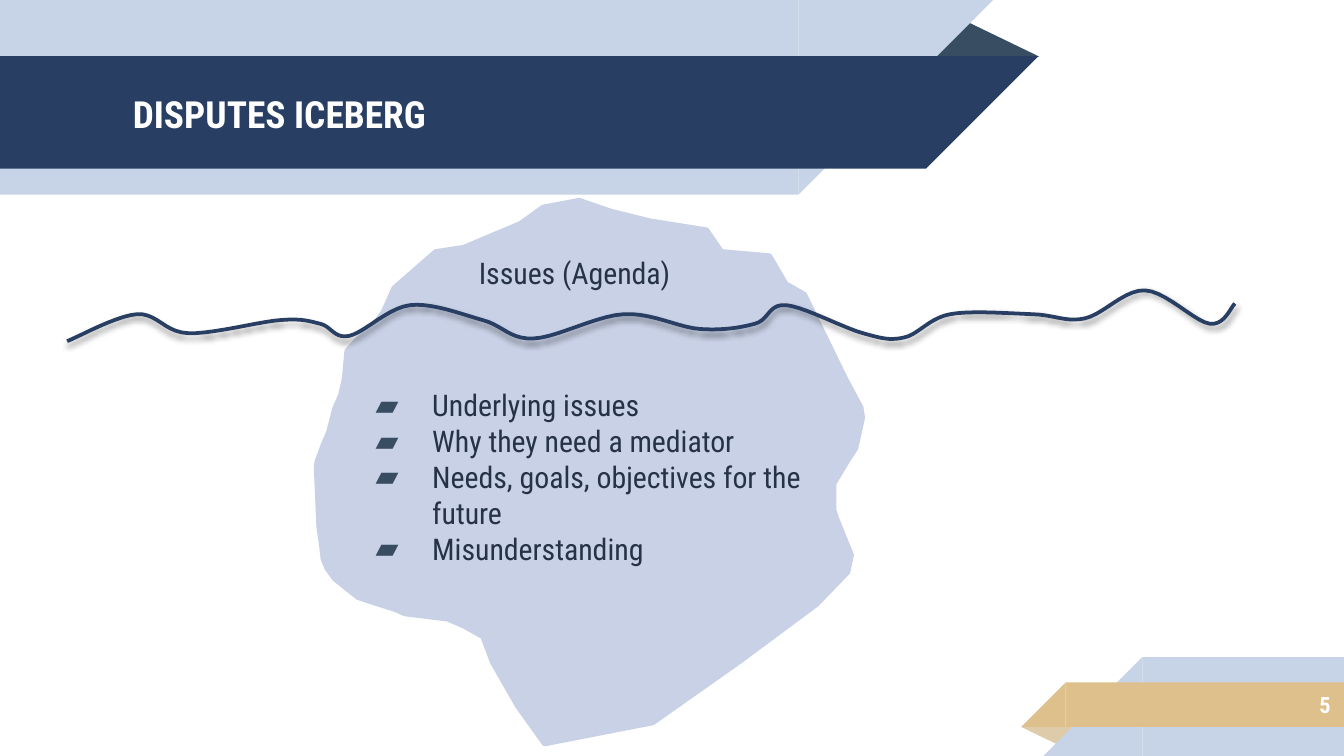
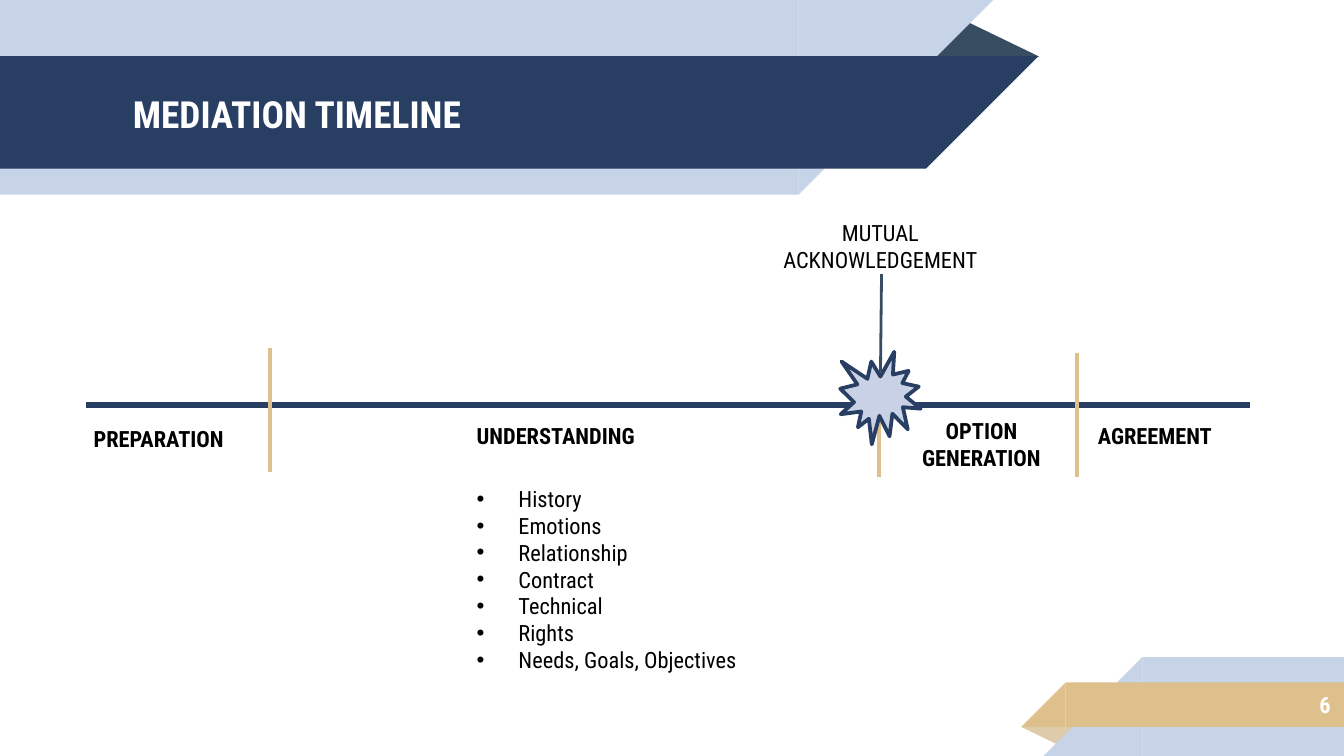
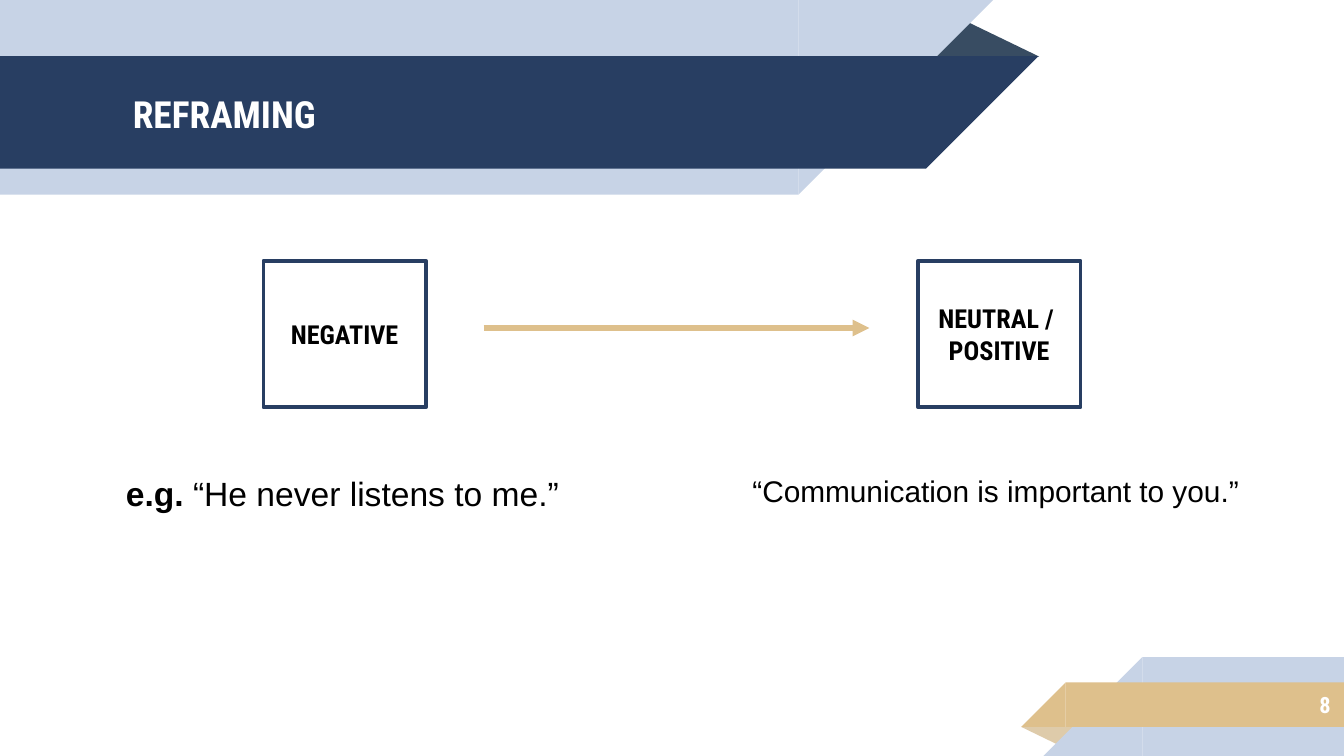
from dataclasses import dataclass

from lxml import etree
from pptx import Presentation
from pptx.dml.color import RGBColor
from pptx.enum.shapes import MSO_CONNECTOR, MSO_SHAPE
from pptx.enum.text import MSO_ANCHOR, PP_ALIGN
from pptx.oxml.ns import qn
from pptx.util import Cm, Pt

RECTANGLE = MSO_SHAPE.RECTANGLE
RIGHT_TRIANGLE = MSO_SHAPE.RIGHT_TRIANGLE
TRIANGLE = MSO_SHAPE.ISOSCELES_TRIANGLE
BURST = MSO_SHAPE.EXPLOSION1
STRAIGHT = MSO_CONNECTOR.STRAIGHT
TOP, MIDDLE = MSO_ANCHOR.TOP, MSO_ANCHOR.MIDDLE
LEFT, CENTER, RIGHT = PP_ALIGN.LEFT, PP_ALIGN.CENTER, PP_ALIGN.RIGHT


@dataclass(frozen=True)
class Theme:
    navy: str = "283E62"
    slate: str = "384C62"
    pale: str = "C7D3E6"
    ice: str = "C8D1E6"
    gold: str = "DEC08C"
    sand: str = "DECBAA"
    ink: str = "263248"
    black: str = "000000"
    white: str = "FFFFFF"
    font: str = "Roboto Condensed"
    quote_font: str = "Arial"
    title_size: int = 20
    quote_size: int = 18
    body_size: int = 16
    box_size: int = 14
    label_size: int = 12


THEME = Theme()
EVEN_INSETS = (0.25, 0.25, 0.25, 0.25)
TEXT_INSETS = (0.25, 0.13, 0.25, 0.13)

ICEBERG = [
    (7.44, 5.44), (8.23, 4.75), (8.76, 4.67), (9.83, 4.22), (10.26, 3.91),
    (10.95, 3.78), (11.56, 3.99), (12.29, 4.17), (13.36, 4.34), (13.64, 4.75),
    (14.55, 4.83), (14.86, 5.36), (15.21, 5.56), (15.98, 7.14), (16.28, 7.7),
    (16.31, 7.9), (16.18, 8.48), (16.03, 8.71), (15.77, 9.14), (15.77, 9.65),
    (15.82, 9.8), (16.1, 10.49), (16.03, 10.82), (15.44, 11.43), (14, 12.5),
    (12.34, 13.67), (10.29, 14.07), (9.91, 13.54), (9.78, 13.36), (9.3, 12.52),
    (9.12, 12.04), (8.76, 11.84), (8.46, 11.71), (7.65, 11.61), (7.47, 11.53),
    (7.06, 11.4), (6.76, 11.3), (6.32, 10.95), (6.17, 10.74), (6.1, 10.57),
    (6.07, 10.31), (6.02, 9.96), (5.97, 8.81), (5.99, 8.71), (6.1, 8.41),
    (6.2, 8.18), (6.32, 7.72), (6.43, 7.47), (6.5, 7.16), (6.55, 6.63),
    (6.73, 6.43), (7.04, 6.17), (7.24, 5.89),
]
WATERLINE = [
    (1.27, 6.45), (2.59, 5.94), (3.56, 6.3), (5.31, 6.05), (6.05, 6.12),
    (6.6, 6.35), (7.75, 5.77), (9.12, 6.05), (10.08, 6.4), (11.79, 5.94),
    (13.23, 6.22), (14.27, 6.12), (14.86, 5.77), (16.31, 6.3), (17.09, 6.38),
    (17.96, 5.94), (19.51, 5.94), (20.5, 6.02), (21.64, 5.49), (22.86, 6.12),
    (23.34, 5.74),
]


def rgb(color):
    return RGBColor.from_string(color)


def cm(values):
    return [Cm(value) for value in values]


def child(parent, tag, **attributes):
    return etree.SubElement(parent, qn(tag), **attributes)


def paint(shape, fill=None, line=None, width=1):
    shape.shadow.inherit = False
    if fill:
        shape.fill.solid()
        shape.fill.fore_color.rgb = rgb(fill)
    else:
        shape.fill.background()
    if line:
        shape.line.color.rgb = rgb(line)
        shape.line.width = Pt(width)
    else:
        shape.line.fill.background()
    return shape


def add_block(slide, kind, box, fill, line=None, width=1, rotation=0):
    block = paint(slide.shapes.add_shape(kind, *cm(box)), fill, line, width)
    block.rotation = rotation
    return block


def add_outline(slide, points, closed, **look):
    start, *rest = [cm(point) for point in points]
    builder = slide.shapes.build_freeform(*start, scale=1.0)
    builder.add_line_segments(rest, close=closed)
    return paint(builder.convert_to_shape(), **look)


def add_rule(slide, start, end, color, width, arrow=False):
    rule = slide.shapes.add_connector(STRAIGHT, *cm(start + end))
    rule.line.color.rgb = rgb(color)
    rule.line.width = Pt(width)
    if arrow:
        child(rule.line._get_or_add_ln(), "a:tailEnd", type="triangle")
    child(rule._element.spPr, "a:effectLst")


def add_bullet(paragraph, symbol, color, indent, hang):
    properties = paragraph._p.get_or_add_pPr()
    properties.set("marL", str(Cm(indent)))
    properties.set("indent", str(-Cm(hang)))
    child(child(properties, "a:buClr"), "a:srgbClr", val=color)
    child(properties, "a:buFont", typeface=THEME.quote_font)
    child(properties, "a:buChar", char=symbol)


def write(shape, text, lead="", size=THEME.label_size, color=THEME.black,
          font=THEME.font, bold=False, align=LEFT, anchor=TOP, wrap=True,
          insets=TEXT_INSETS, bullet=None):
    frame = shape.text_frame
    frame.word_wrap = wrap
    frame.vertical_anchor = anchor
    (frame.margin_left, frame.margin_top,
     frame.margin_right, frame.margin_bottom) = cm(insets)
    for index, line in enumerate(text.split("\n")):
        paragraph = frame.add_paragraph() if index else frame.paragraphs[0]
        paragraph.alignment = align
        if bullet:
            add_bullet(paragraph, *bullet)
        for words, heavy in ((lead, True), (line, bold)):
            if words:
                run = paragraph.add_run()
                run.text = words
                run.font.name = font
                run.font.size = Pt(size)
                run.font.bold = heavy
                run.font.color.rgb = rgb(color)


def add_text(slide, box, text, **style):
    write(slide.shapes.add_textbox(*cm(box)), text, **style)


def add_band(slide, box, fill, points_right):
    left, top, width, height = box
    add_block(slide, RECTANGLE, box, fill)
    tip_left = left + width if points_right else left - height
    add_block(slide, RIGHT_TRIANGLE, (tip_left, top, height, height), fill,
              rotation=90 if points_right else 270)


def add_fold(slide, box, fill, rotation=0):
    fold = add_block(slide, TRIANGLE, box, fill, rotation=rotation)
    fold.adjustments[0] = 0.32


def start_slide(deck, title, number):
    slide = deck.slides.add_slide(deck.slide_layouts[6])
    add_fold(slide, (17.48, 0.36, 2.16, 0.71), THEME.slate)
    add_band(slide, (0, 0, 15.09, 3.68), THEME.pale, True)
    add_band(slide, (0, 1.06, 17.5, 2.13), THEME.navy, True)
    add_fold(slide, (19.3, 13.74, 1.09, 0.36), THEME.sand, 180)
    add_band(slide, (21.59, 12.42, 3.81, 1.87), THEME.pale, False)
    add_band(slide, (20.14, 12.9, 5.26, 0.84), THEME.gold, False)
    heading = dict(color=THEME.white, bold=True, anchor=MIDDLE, insets=EVEN_INSETS)
    add_text(slide, (2.26, 1.09, 15.27, 2.13), title, size=THEME.title_size, **heading)
    add_text(slide, (21.26, 12.88, 4.14, 0.89), str(number), align=RIGHT, **heading)
    return slide


def smooth(points, steps=10):
    padded = [points[0], *points, points[-1]]
    curve = [points[0]]
    for before, start, end, after in zip(padded, padded[1:], padded[2:], padded[3:]):
        for step in range(1, steps + 1):
            t = step / steps
            curve.append(tuple(
                b + (c - a) * t / 2
                + (2 * a - 5 * b + 4 * c - d) * t ** 2 / 2
                + (3 * b - a - 3 * c + d) * t ** 3 / 2
                for a, b, c, d in zip(before, start, end, after)))
    return curve


def cast_shadow(shape, blur, distance, opacity):
    effects = shape._element.spPr.find(qn("a:effectLst"))
    shadow = child(effects, "a:outerShdw", blurRad=str(Pt(blur)),
                   dist=str(Pt(distance)), dir="5400000", rotWithShape="0")
    tint = child(shadow, "a:srgbClr", val=THEME.black)
    child(tint, "a:alpha", val=str(opacity * 1000))


def build_iceberg(deck):
    slide = start_slide(deck, "DISPUTES ICEBERG", 5)
    add_outline(slide, ICEBERG, True, fill=THEME.ice, line=THEME.ice, width=2.25)
    body = dict(size=THEME.body_size, color=THEME.ink, anchor=MIDDLE)
    add_text(slide, (6.65, 5.23, 9.6, 8.76),
             "Underlying issues\nWhy they need a mediator\n"
             "Needs, goals, objectives for the future\nMisunderstanding",
             bullet=("▰", THEME.slate, 1.27, 1.07),
             insets=(0.25, 0.25, 0.25, 1.45), **body)
    waterline = add_outline(slide, smooth(WATERLINE), False, line=THEME.navy, width=2)
    cast_shadow(waterline, 3.1, 1.6, 38)
    add_text(slide, (8.59, 3.99, 5.13, 2.34), "Issues (Agenda)",
             insets=(0.46, 0.25, 0.25, 0.25), **body)


def build_timeline(deck):
    slide = start_slide(deck, "MEDIATION TIMELINE", 6)
    add_rule(slide, (1.63, 7.65), (23.62, 7.65), THEME.navy, 3)
    for x, top, bottom in ((5.11, 6.58, 8.92), (16.61, 7.14, 9.02), (20.35, 6.68, 9.02)):
        add_rule(slide, (x, top), (x, bottom), THEME.gold, 2.25)
    for box, stage, align in (
        ((1.52, 7.9, 3.68, 0.76), "PREPARATION", LEFT),
        ((8.76, 7.85, 4.29, 0.76), "UNDERSTANDING", LEFT),
        ((16.71, 7.75, 3.68, 1.27), "OPTION GENERATION", CENTER),
        ((20.5, 7.85, 3.38, 0.76), "AGREEMENT", LEFT),
    ):
        add_text(slide, box, stage, bold=True, align=align)
    add_block(slide, BURST, (15.88, 6.65, 1.52, 1.75), THEME.ice, THEME.navy, 2)
    add_rule(slide, (16.64, 7.04), (16.66, 5.18), THEME.slate, 1.5)
    add_text(slide, (8.76, 9.04, 6.27, 3.84),
             "History\nEmotions\nRelationship\nContract\nTechnical\nRights\n"
             "Needs, Goals, Objectives", bullet=("•", THEME.black, 0.79, 0.79))
    add_text(slide, (13.92, 4.01, 5.44, 1.27), "MUTUAL ACKNOWLEDGEMENT", align=CENTER)


def build_reframing(deck):
    slide = start_slide(deck, "REFRAMING", 8)
    for left, tone in ((4.98, "NEGATIVE"), (17.35, "NEUTRAL / \nPOSITIVE")):
        square = add_block(slide, RECTANGLE, (left, 4.93, 3.07, 2.77),
                           THEME.white, THEME.navy, 2)
        write(square, tone, size=THEME.box_size, bold=True, align=CENTER, anchor=MIDDLE)
    add_rule(slide, (9.14, 6.2), (16.43, 6.2), THEME.gold, 3, arrow=True)
    quote = dict(font=THEME.quote_font, wrap=False)
    add_text(slide, (2.13, 8.81, 8.79, 1.02), "“He never listens to me.”",
             lead="e.g. ", size=THEME.quote_size, **quote)
    add_text(slide, (13.97, 8.81, 9.83, 0.94), "“Communication is important to you.”",
             size=THEME.body_size, **quote)


def main():
    deck = Presentation()
    deck.slide_width, deck.slide_height = cm((25.4, 14.29))
    build_iceberg(deck)
    build_timeline(deck)
    build_reframing(deck)
    deck.save("out.pptx")


if __name__ == "__main__":
    main()
